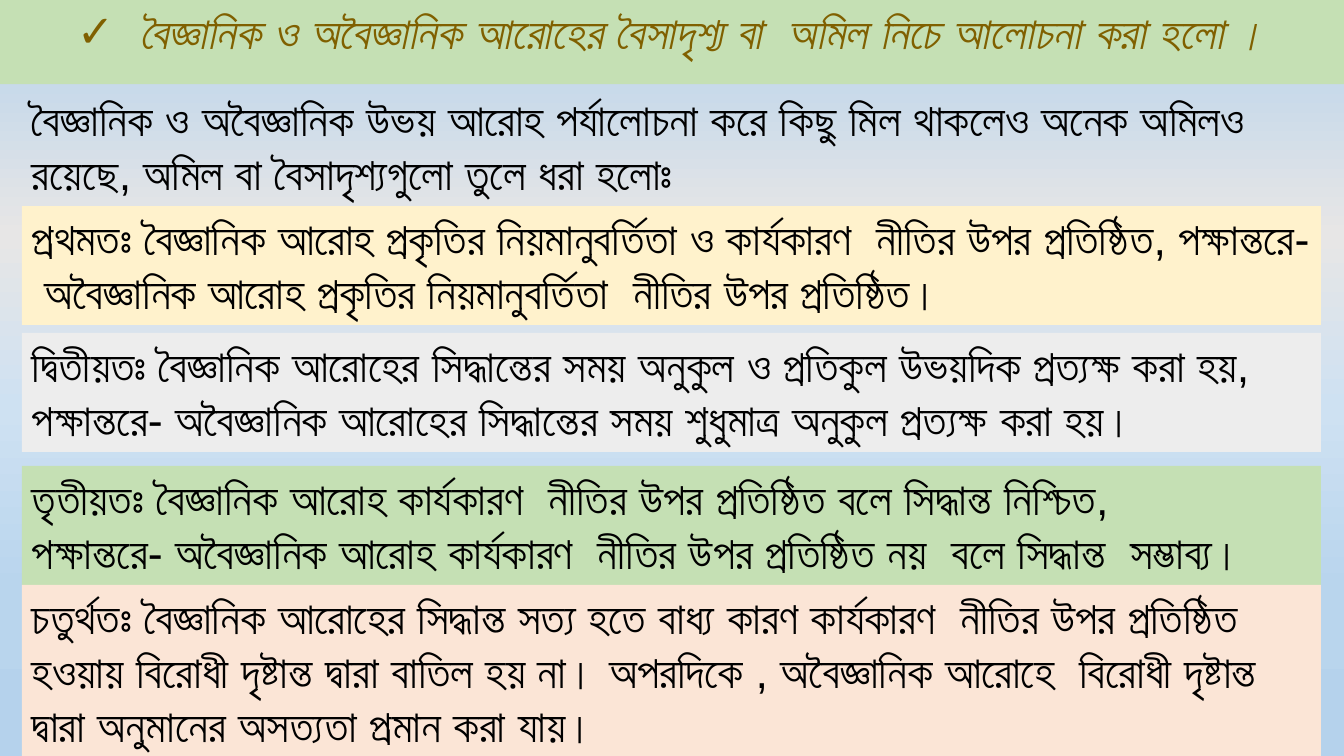
from typing import NamedTuple

from lxml.etree import SubElement
from pptx import Presentation
from pptx.dml.color import RGBColor
from pptx.enum.shapes import MSO_SHAPE
from pptx.enum.text import MSO_ANCHOR, MSO_AUTO_SIZE, PP_ALIGN
from pptx.oxml.ns import qn
from pptx.util import Emu, Pt

EMU_PER_PX = 914400 / 100.8
SLIDE_WIDTH, SLIDE_HEIGHT = 1344, 756
POINT_LEFT, POINT_WIDTH = 22, 1299
HEADING_INDENT = 63
FONT = "Arial"


class Point(NamedTuple):
    top: int
    height: int
    fill: str | None
    text: str


HEADING = "বৈজ্ঞানিক ও অবৈজ্ঞানিক আরোহের বৈসাদৃশ্য বা  অমিল নিচে আলোচনা করা হলো ।"

POINTS = [
    Point(87, 119, None,
          "বৈজ্ঞানিক ও অবৈজ্ঞানিক উভয় আরোহ পর্যালোচনা করে কিছু মিল থাকলেও অনেক অমিলও "
          "রয়েছে, অমিল বা বৈসাদৃশ্যগুলো তুলে ধরা হলোঃ"),
    Point(206, 119, "FFF2CC",
          "প্রথমতঃ বৈজ্ঞানিক আরোহ প্রকৃতির নিয়মানুবর্তিতা ও কার্যকারণ  নীতির উপর প্রতিষ্ঠিত, "
          "পক্ষান্তরে-  অবৈজ্ঞানিক আরোহ প্রকৃতির নিয়মানুবর্তিতা  নীতির উপর প্রতিষ্ঠিত।"),
    Point(333, 119, "EDEDED",
          "দ্বিতীয়তঃ বৈজ্ঞানিক আরোহের সিদ্ধান্তের সময় অনুকুল ও প্রতিকুল উভয়দিক প্রত্যক্ষ করা হয়, "
          "পক্ষান্তরে- অবৈজ্ঞানিক আরোহের সিদ্ধান্তের সময় শুধুমাত্র অনুকুল প্রত্যক্ষ করা হয়।"),
    Point(466, 119, "C5E0B4",
          "তৃতীয়তঃ বৈজ্ঞানিক আরোহ কার্যকারণ  নীতির উপর প্রতিষ্ঠিত বলে সিদ্ধান্ত নিশ্চিত,\n"
          "পক্ষান্তরে- অবৈজ্ঞানিক আরোহ কার্যকারণ  নীতির উপর প্রতিষ্ঠিত নয়  বলে সিদ্ধান্ত  সম্ভাব্য।"),
    Point(585, 173, "FBE5D6",
          "চতুর্থতঃ বৈজ্ঞানিক আরোহের সিদ্ধান্ত সত্য হতে বাধ্য কারণ কার্যকারণ  নীতির উপর প্রতিষ্ঠিত "
          "হওয়ায় বিরোধী দৃষ্টান্ত দ্বারা বাতিল হয় না। অপরদিকে , অবৈজ্ঞানিক আরোহে  বিরোধী দৃষ্টান্ত দ্বারা "
          "অনুমানের অসত্যতা প্রমান করা যায়।"),
]

BACKGROUND_STOPS = [(0, "B5D2EC"), (31, "E7E6E6"), (54, "CEE1F2"),
                    (78, "B9D5ED"), (99, "B5D2EC")]


def px(length: int) -> Emu:
    return Emu(round(length * EMU_PER_PX))


def color(value: str) -> RGBColor:
    return RGBColor.from_string(value)


def write(frame, text: str, *, size: int = 32, ink: str = "000000", bold: bool = False,
          italic: bool = False, align=PP_ALIGN.LEFT, bullet: str = "", indent: int = 0) -> None:
    frame.word_wrap = True
    frame.auto_size = MSO_AUTO_SIZE.SHAPE_TO_FIT_TEXT
    frame.vertical_anchor = MSO_ANCHOR.TOP
    frame.text = text
    for paragraph in frame.paragraphs:
        paragraph.alignment = align
        if bullet:
            properties = paragraph._p.get_or_add_pPr()
            properties.set("marL", str(px(indent)))
            properties.set("indent", str(-px(indent)))
            SubElement(properties, qn("a:buFont"), typeface=FONT)
            SubElement(properties, qn("a:buChar"), char=bullet)
        for run in paragraph.runs:
            font = run.font
            font.size, font.name = Pt(size), FONT
            font.bold, font.italic = bold, italic
            font.color.rgb = color(ink)
            # Bengali takes its face from the complex-script font
            SubElement(run._r.get_or_add_rPr(), qn("a:cs"), typeface=FONT)


def paint_background(slide) -> None:
    fill = slide.background.fill
    fill.gradient()
    fill.gradient_angle = 270
    stops = slide._element.find(".//" + qn("a:gsLst"))
    for stop in list(stops):
        stops.remove(stop)
    for percent, value in BACKGROUND_STOPS:
        stop = SubElement(stops, qn("a:gs"), pos=str(percent * 1000))
        SubElement(stop, qn("a:srgbClr"), val=value)


def add_heading(slide) -> None:
    heading = slide.shapes.title
    heading.left, heading.top = px(0), px(0)
    heading.width, heading.height = px(SLIDE_WIDTH), px(64)
    heading.fill.solid()
    heading.fill.fore_color.rgb = color("C5E0B4")
    write(heading.text_frame, HEADING, ink="806000", bold=True, italic=True,
          align=PP_ALIGN.CENTER, bullet="✓", indent=HEADING_INDENT)


def add_point(slide, point: Point) -> None:
    place = px(POINT_LEFT), px(point.top), px(POINT_WIDTH), px(point.height)
    if point.fill:
        box = slide.shapes.add_shape(MSO_SHAPE.RECTANGLE, *place)
        box.shadow.inherit = False
        box.fill.solid()
        box.fill.fore_color.rgb = color(point.fill)
        box.line.fill.background()
    else:
        box = slide.shapes.add_textbox(*place)
    write(box.text_frame, point.text)


def main() -> None:
    deck = Presentation()
    deck.slide_width, deck.slide_height = px(SLIDE_WIDTH), px(SLIDE_HEIGHT)
    slide = deck.slides.add_slide(deck.slide_layouts[5])  # title only
    paint_background(slide)
    add_heading(slide)
    # Introduction and the four differences
    for point in POINTS:
        add_point(slide, point)
    deck.save("out.pptx")


if __name__ == "__main__":
    main()
